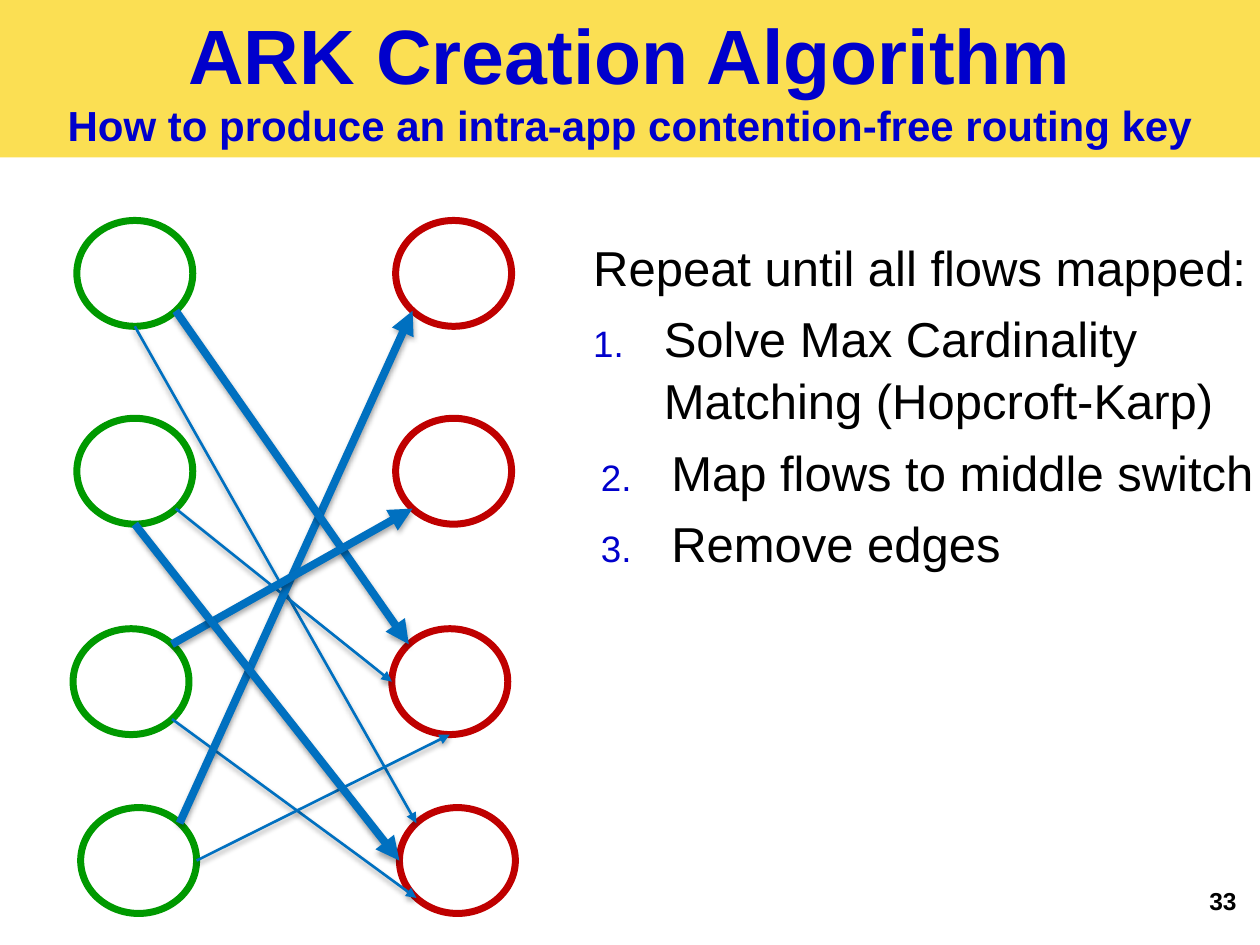
from dataclasses import dataclass
from math import cos, radians, sin

from lxml import etree
from pptx import Presentation
from pptx import util as u
from pptx.dml.color import RGBColor
from pptx.enum import shapes, text
from pptx.oxml import ns

SCALE = 9144
CIRCLE = (92, 84)
ROW_TOPS = (0, 157, 324, 466)
ROW_SHIFTS = (3, 3, 0, 6)
TOP_RIGHT, RIGHT, BOTTOM_RIGHT, BOTTOM = -45, 0, 45, 90
BOTTOM_LEFT, LEFT, TOP_LEFT = 135, 180, 225
OTHER_FLOWS = [(0, BOTTOM, 3, TOP_LEFT), (1, BOTTOM_RIGHT, 2, LEFT),
               (2, BOTTOM_RIGHT, 3, BOTTOM_LEFT), (3, RIGHT, 2, BOTTOM)]
MATCHED_FLOWS = [(3, TOP_RIGHT, 0, BOTTOM_LEFT), (0, BOTTOM_RIGHT, 2, TOP_LEFT),
                 (2, TOP_RIGHT, 1, BOTTOM_LEFT), (1, BOTTOM, 3, LEFT)]
STEPS = [("Solve Max Cardinality Matching (Hopcroft-Karp)", 56),
         ("Map flows to middle switch", 62), ("Remove edges", 62)]


@dataclass(frozen=True)
class Theme:
    """Colours and sizes of the slide."""
    font: str = "Arial"
    banner: str = "FBDF53"
    heading: str = "0000CC"
    ink: str = "000000"
    source: str = "009900"
    target: str = "BF0000"
    flow: str = "0070C0"
    title: int = 44
    subtitle: int = 24
    body: int = 28
    number: int = 14
    ring: float = 4
    thin: float = 1.5
    thick: float = 4.5


THEME = Theme()


def px(*lengths):
    """Turn px lengths into EMU."""
    return [u.Emu(round(length * SCALE)) for length in lengths]


def rgb(colour):
    """Make a colour from its hex digits."""
    return RGBColor.from_string(colour)


def style(run, size, colour, bold=False):
    """Set the font of a run."""
    run.font.name, run.font.size, run.font.bold = THEME.font, u.Pt(size), bold
    run.font.color.rgb = rgb(colour)


def element(parent, tag, **attributes):
    """Append a drawing element to a parent."""
    child = etree.SubElement(parent, ns.qn(f"a:{tag}"))
    for name, value in attributes.items():
        child.set(name, str(value))
    return child


def banner(slide, box):
    """Place the title and its subtitle on a coloured band."""
    title = slide.shapes.title
    title.left, title.top, title.width, title.height = px(*box)
    title.fill.solid()
    title.fill.fore_color.rgb = rgb(THEME.banner)
    frame = title.text_frame
    frame.text = ("ARK Creation Algorithm\v"
                  "How to produce an intra-app contention-free routing key")
    frame.auto_size = text.MSO_AUTO_SIZE.NONE
    frame.vertical_anchor = text.MSO_ANCHOR.MIDDLE
    heading = frame.paragraphs[0]
    heading.alignment = text.PP_ALIGN.CENTER
    for run, size in zip(heading.runs, (THEME.title, THEME.subtitle)):
        style(run, size, THEME.heading, True)


def node_column(slide, left, top, colour):
    """Draw a column of rings and return their centres."""
    column = slide.shapes.add_group_shape()
    width, height = CIRCLE
    centres = []
    for shift, drop in zip(ROW_SHIFTS, ROW_TOPS):
        x, y = left + shift, top + drop
        node = column.shapes.add_shape(shapes.MSO_SHAPE.OVAL, *px(x, y, width, height))
        node.shadow.inherit = False
        node.fill.background()
        node.line.color.rgb = rgb(colour)
        node.line.width = u.Pt(THEME.ring)
        centres.append((x + width / 2, y + height / 2))
    return centres


def rim(centre, angle):
    """Find the point of a ring at an angle."""
    width, height = CIRCLE
    return (centre[0] + width / 2 * cos(radians(angle)),
            centre[1] + height / 2 * sin(radians(angle)))


def flow_arrow(slide, start, end, weight):
    """Draw a shadowed arrow between two points."""
    flow = slide.shapes.add_connector(shapes.MSO_CONNECTOR.STRAIGHT, *px(*start, *end))
    flow.line.color.rgb = rgb(THEME.flow)
    flow.line.width = u.Pt(weight)
    element(flow.line._get_or_add_ln(), "tailEnd", type="triangle")
    effects = element(flow._element.spPr, "effectLst")
    shadow = element(effects, "outerShdw", blurRad=40000, dist=23000,
                     dir=5400000, rotWithShape=0)
    element(element(shadow, "srgbClr", val=THEME.ink), "alpha", val=35000)


def flow_arrows(slide, sources, targets, flows, weight):
    """Join source rings to target rings."""
    for source, leave, target, arrive in flows:
        flow_arrow(slide, rim(sources[source], leave), rim(targets[target], arrive), weight)


def text_area(slide, box):
    """Add a wrapping text frame."""
    frame = slide.shapes.add_textbox(*px(*box)).text_frame
    frame.word_wrap = True
    return frame


def number_step(paragraph, indent):
    """Give a paragraph a coloured automatic number."""
    properties = paragraph._p.get_or_add_pPr()
    properties.set("marL", str(px(indent)[0]))
    properties.set("indent", str(px(-56)[0]))
    element(element(properties, "buClr"), "srgbClr", val=THEME.heading)
    element(properties, "buSzPct", val=75000)
    element(properties, "buAutoNum", type="arabicPeriod")


def algorithm(slide, box):
    """Write the loop heading and its numbered steps."""
    frame = text_area(slide, box)
    frame.margin_right = 0
    lines = [("Repeat until all flows mapped:", 0), *STEPS]
    frame.text = "\n".join(line for line, _ in lines)
    for paragraph, (_, indent) in zip(frame.paragraphs, lines):
        paragraph.line_spacing = 1.05
        paragraph.space_before = u.Pt(THEME.body * 0.2)
        style(paragraph.runs[0], THEME.body, THEME.ink)
        if indent:
            number_step(paragraph, indent)


def page_number(slide, box):
    """Write the page number."""
    frame = text_area(slide, box)
    frame.text = "33"
    style(frame.paragraphs[0].runs[0], THEME.number, THEME.ink, True)


def main():
    """Build and save the slide."""
    deck = Presentation()
    deck.slide_width, deck.slide_height = px(1000, 750)
    slide = deck.slides.add_slide(deck.slide_layouts[5])
    banner(slide, (0, 0, 1000, 125))
    targets = node_column(slide, 311, 175, THEME.target)
    sources = node_column(slide, 58, 175, THEME.source)
    flow_arrows(slide, sources, targets, OTHER_FLOWS, THEME.thin)
    algorithm(slide, (461, 181, 539, 495))
    flow_arrows(slide, sources, targets, MATCHED_FLOWS, THEME.thick)
    page_number(slide, (950, 698, 50, 52))
    deck.save("out.pptx")


if __name__ == "__main__":
    main()
